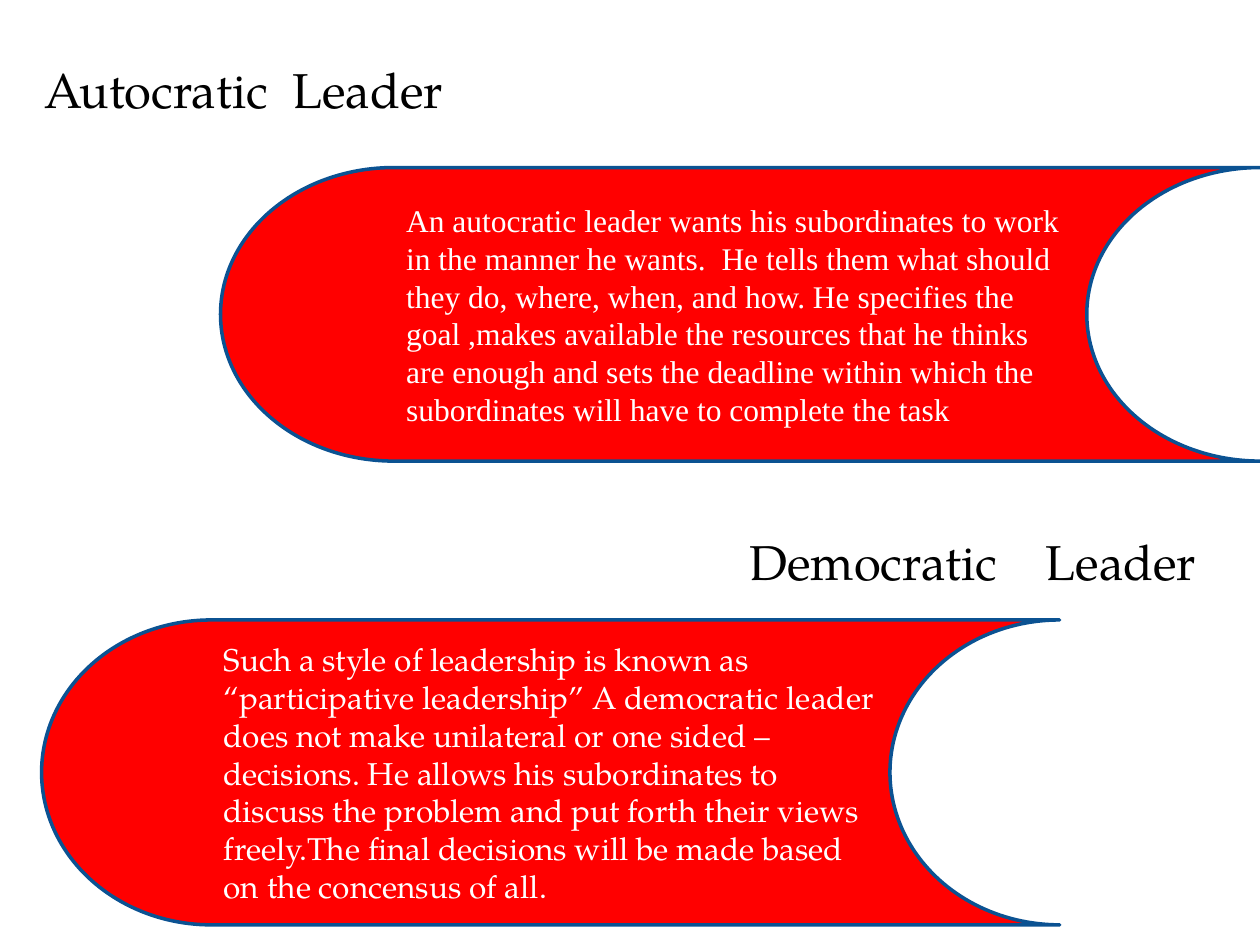
import pptx
import pptx.util
from pptx.dml.color import RGBColor
from pptx.enum.shapes import MSO_SHAPE
from pptx.enum.text import MSO_ANCHOR, PP_ALIGN
from pptx.oxml import parse_xml
from pptx.oxml.ns import nsdecls
from pptx.util import Inches

COLORS = {"panel": "FF0000", "outline": "0B5292", "panel_text": "FFFFFF", "heading": "000000"}
SERIF = "TeX Gyre Pagella"


def format_text(tf, font, size, color):
    tf.word_wrap = True
    p = tf.paragraphs[0]
    p.alignment = PP_ALIGN.LEFT
    for r in p.runs:
        r.font.name = font
        r.font.size = pptx.util.Pt(size)
        r.font.color.rgb = RGBColor.from_string(COLORS[color])


prs = pptx.Presentation()
prs.slide_width, prs.slide_height = Inches(10), Inches(7.5)
s = prs.slides.add_slide(prs.slide_layouts[5])

# Headings
title = s.shapes.title
title.left, title.top = Inches(0.25), Inches(0.42)
title.width, title.height = Inches(3.67), Inches(0.57)
title.text_frame.text = "Autocratic  Leader"
title.text_frame.vertical_anchor = MSO_ANCHOR.TOP
format_text(title.text_frame, SERIF, 28, "heading")

box = s.shapes.add_textbox(Inches(5.17), Inches(4.17), Inches(4.83), Inches(0.57))
tf = box.text_frame
tf.margin_left = Inches(0.78)
p = tf.paragraphs[0]
p.text = "Democratic\tLeader"
tabs = parse_xml(f'<a:tabLst {nsdecls("a")}><a:tab pos="{Inches(2.35)}" algn="l"/></a:tabLst>')
p._p.get_or_add_pPr().append(tabs)
format_text(tf, SERIF, 28, "heading")

# Description panels
panels = [
    (1.75, 1.33, 8.25, 2.33, "Times New Roman",
     "An autocratic leader wants his subordinates to work in the manner he wants.  "
     "He tells them what should they do, where, when, and how. He specifies the goal "
     ",makes available the resources that he thinks are enough and sets the deadline "
     "within which the subordinates will have to complete the task"),
    (0.33, 4.92, 8.08, 2.42, SERIF,
     "Such a style of leadership is known as “participative leadership” A democratic "
     "leader does not make unilateral or one sided –decisions. He allows his "
     "subordinates to discuss the problem and put forth their views freely."
     "The final decisions will be made based on the concensus of all."),
]
for left, top, width, height, font, text in panels:
    sp = s.shapes.add_shape(MSO_SHAPE.FLOWCHART_STORED_DATA,
                            Inches(left), Inches(top), Inches(width), Inches(height))
    sp.shadow.inherit = False
    sp.fill.solid()
    sp.fill.fore_color.rgb = RGBColor.from_string(COLORS["panel"])
    sp.line.color.rgb = RGBColor.from_string(COLORS["outline"])
    sp.line.width = pptx.util.Pt(2)
    tf = sp.text_frame
    tf.text = text
    tf.vertical_anchor = MSO_ANCHOR.MIDDLE
    tf.paragraphs[0].line_spacing = pptx.util.Pt(21.6)
    format_text(tf, font, 18, "panel_text")

prs.save("out.pptx")
